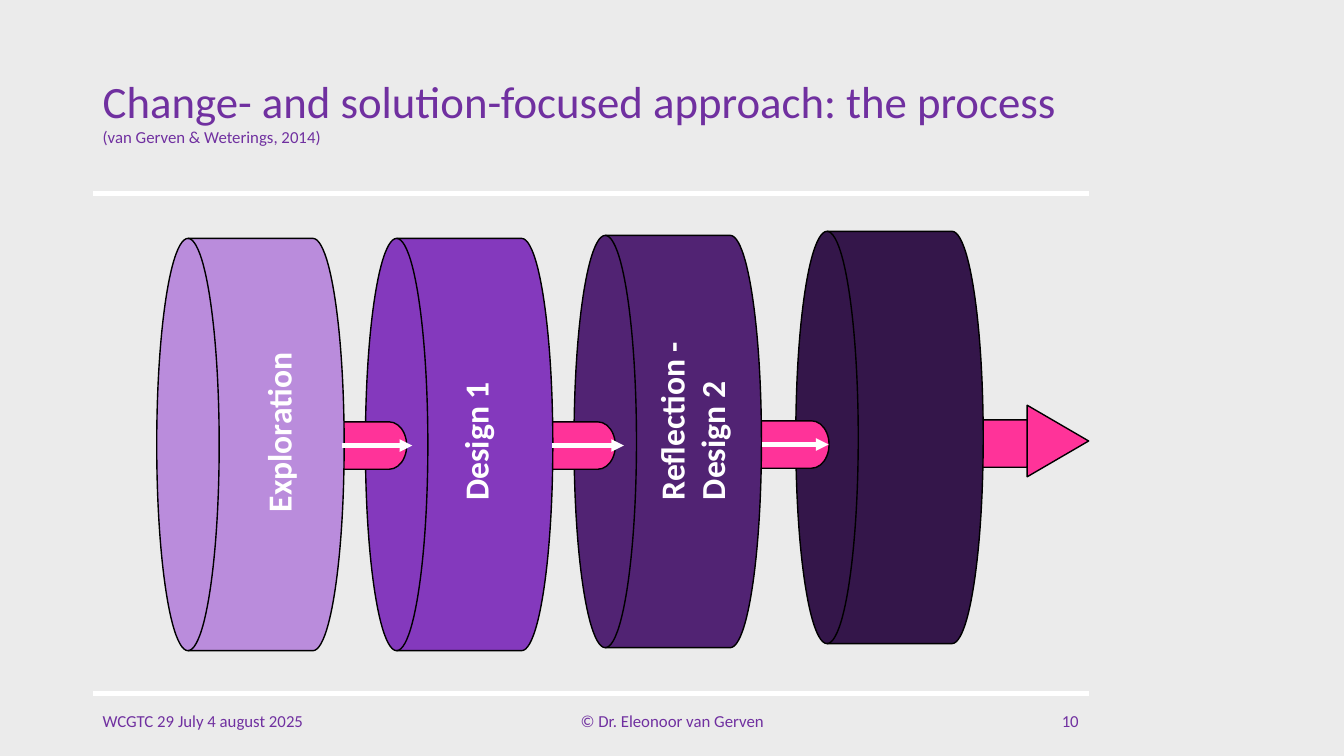
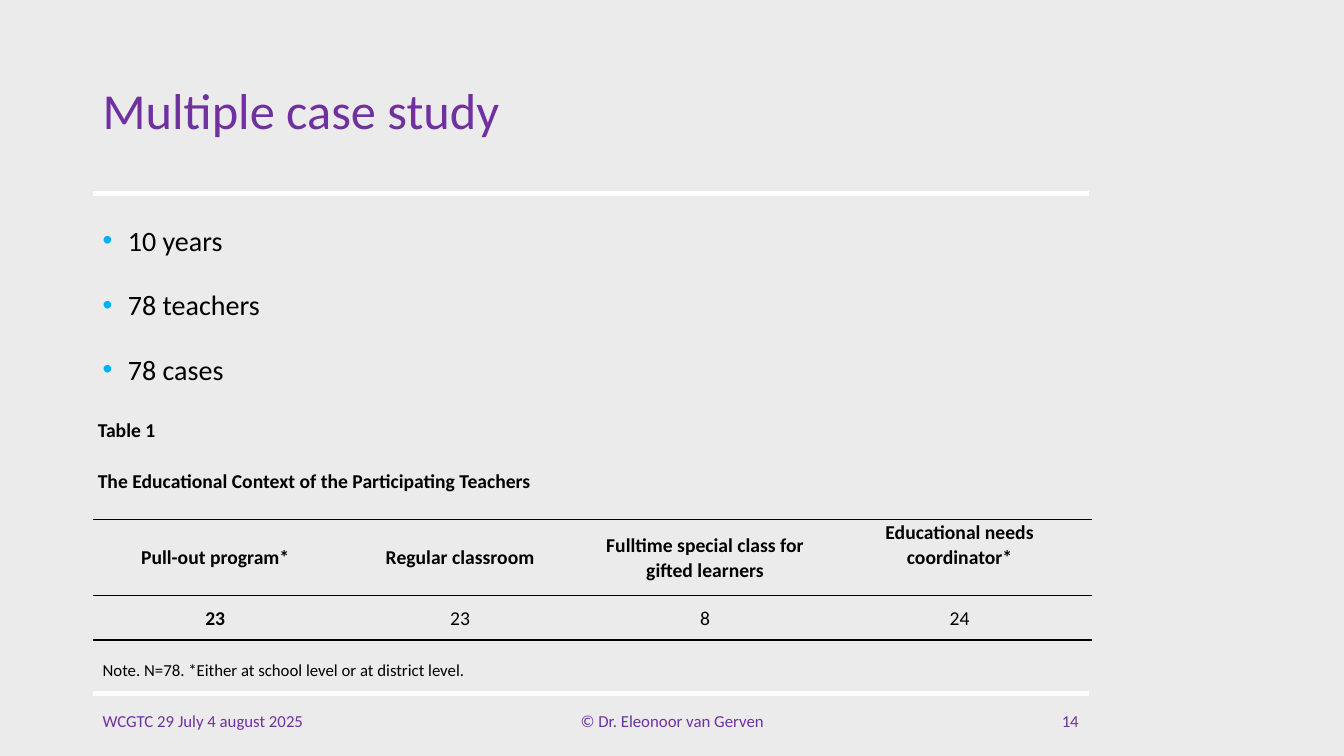
from dataclasses import dataclass

from lxml.etree import SubElement as Sub
from pptx import Presentation
from pptx.dml.color import RGBColor as Rgb
from pptx.enum.shapes import MSO_CONNECTOR as Link, MSO_SHAPE as Kind
from pptx.enum.text import MSO_ANCHOR as Anchor, PP_ALIGN as Align
from pptx.oxml.ns import qn
from pptx.util import Inches, Pt


@dataclass(frozen=True)
class Theme:
    face: str = "Calibri"
    back: str = "EBEBEB"
    ink: str = "000000"
    white: str = "FFFFFF"
    brand: str = "7030A0"
    pink: str = "FF3399"
    dot: str = "00B0F0"
    drums: tuple = ("BA8CDC", "8439BD", "512373", "34164A")
    head: int = 36
    slim: int = 32
    label: int = 24
    body: int = 20
    grid: int = 14
    small: int = 12
    thin: int = 1
    thick: int = 3


COLS, ROWS = 133.33, 75  # grid cells on a slide
LEFT, RIGHT = 9.2, 108
WIDE = RIGHT - LEFT
MID = 44.2  # row of the process axis


def cells(count):
    return Inches(count / 10)


def apply(item, values):
    for name, value in values.items():
        setattr(item, name, value)


class Deck:
    def __init__(self, theme):
        self.theme = theme
        self.prs = Presentation()
        apply(self.prs, dict(slide_width=cells(COLS), slide_height=cells(ROWS)))
        fill = self.prs.slide_master.background.fill
        fill.solid()
        fill.fore_color.rgb = Rgb.from_string(theme.back)

    def style(self, font, size, hue, bold=False):
        apply(font, dict(name=self.theme.face, size=Pt(size), bold=bold))
        font.color.rgb = Rgb.from_string(hue)

    def put(self, frame, lines, size, hue, bold=False, dot=None, gap=0, **form):
        """Fill a text frame, with one paragraph for each line."""
        for i, line in enumerate(lines):
            para = frame.add_paragraph() if i else frame.paragraphs[0]
            apply(para, form)
            if i and gap:
                para.space_before = Pt(gap)
            if dot:
                self.bullet(para, dot)
            run = para.add_run()
            run.text = line
            self.style(run.font, size, hue, bold)

    def bullet(self, para, hue):
        props = para._p.get_or_add_pPr()
        props.set("marL", str(Inches(0.25)))
        props.set("indent", str(-Inches(0.25)))
        Sub(Sub(props, qn("a:buClr")), qn("a:srgbClr"), val=hue)
        Sub(props, qn("a:buFont"), typeface="Arial")
        Sub(props, qn("a:buChar"), char="•")

    def text(self, box, lines, size, hue, anchor=Anchor.MIDDLE, turn=0, **form):
        shape = self.slide.shapes.add_textbox(*map(cells, box))
        shape.rotation = turn
        frame = shape.text_frame
        apply(frame, dict(word_wrap=True, vertical_anchor=anchor))
        self.put(frame, lines, size, hue, **form)
        return frame

    def line(self, start, end, arrow=False):
        link = self.slide.shapes.add_connector(
            Link.STRAIGHT, *map(cells, start + end))
        link.line.color.rgb = Rgb.from_string(self.theme.white)
        link.line.width = Pt(self.theme.thick)
        if arrow:
            Sub(link.line._get_or_add_ln(), qn("a:tailEnd"), type="triangle")
        Sub(link._element.spPr, qn("a:effectLst"))

    def shape(self, kind, mid, size, turn, hue):
        """Place a turned shape by its centre; size is before the turn."""
        (x, y), (w, h) = mid, size
        item = self.slide.shapes.add_shape(
            kind, *map(cells, (x - w / 2, y - h / 2, w, h)))
        item.rotation = turn
        item.shadow.inherit = False
        item.fill.solid()
        item.fill.fore_color.rgb = Rgb.from_string(hue)
        item.line.color.rgb = Rgb.from_string(self.theme.ink)
        item.line.width = Pt(self.theme.thin)

    def label(self, words, mid, size):
        (x, y), (w, h) = mid, size
        self.text((x - w / 2, y - h / 2, w, h), [words], self.theme.label,
                  self.theme.white, Anchor.TOP, 270, bold=True)

    def page(self, title, number, size, cite=None):
        """Start a slide with its title, rules and footer."""
        look = self.theme
        self.slide = self.prs.slides.add_slide(self.prs.slide_layouts[6])
        for row in (19.2, 68.8):
            self.line((LEFT, row), (RIGHT, row))
        frame = self.text((LEFT, 4, WIDE, 14.5), [title], size, look.brand,
                          line_spacing=0.9)
        if cite:
            para = frame.paragraphs[0]
            para.add_line_break()
            run = para.add_run()
            run.text = cite
            self.style(run.font, look.small, look.brand)
        for col, width, words, side in (
                (LEFT, 30, "WCGTC 29 July 4 august 2025", Align.LEFT),
                (44.2, 45, "© Dr. Eleonoor van Gerven", Align.CENTER),
                (94.2, 13.8, str(number), Align.RIGHT)):
            self.text((col, 69.5, width, 4), [words], look.small, look.brand,
                      alignment=side)

    def table(self, left, top, widths, heights):
        """Add a plain table with a rule under every row."""
        frame = self.slide.shapes.add_table(
            len(heights), len(widths),
            *map(cells, (left, top, sum(widths), sum(heights))))
        table = frame.table
        apply(table, dict(first_row=False, horz_banding=False))
        table._tbl.tblPr[0].text = "{2D5ABB26-0587-4C30-8999-92F81FD0307C}"
        for col, width in zip(table.columns, widths):
            col.width = cells(width)
        for row, height in zip(table.rows, heights):
            row.height = cells(height)
        for cell in table.iter_cells():
            apply(cell, dict(margin_left=cells(0.5), margin_right=cells(0.5),
                             margin_top=0, margin_bottom=0,
                             vertical_anchor=Anchor.MIDDLE))
            cell.fill.background()
            props = cell._tc.get_or_add_tcPr()
            edge = Sub(props, qn("a:lnB"), w=str(Pt(self.theme.thin)))
            Sub(Sub(edge, qn("a:solidFill")), qn("a:srgbClr"), val=self.theme.ink)
            props.insert(0, edge)
        return table


def process(deck):
    look = deck.theme
    deck.page("Change- and solution-focused approach: the process", 10,
              look.slim, "(van Gerven & Weterings, 2014)")
    drums = ((24.85, 44.1), (45.55, 44.1), (66.25, 43.8), (88.25, 43.4))
    pins = ((35.15, MID), (55.85, MID), (77.05, 44.1), (98.35, 44))
    disk = Kind.FLOWCHART_MAGNETIC_DISK
    for drum, pin, hue in reversed(list(zip(drums, pins, look.drums))):
        deck.shape(disk, pin, (4.7, 10.4), 270, look.pink)
        deck.shape(disk, drum, (40.9, 18.6), 270, hue)
    for start, end, row in ((33.9, 40.9, MID), (54.8, 61.9, MID),
                            (75.6, 82.2, 44.1)):
        deck.line((start, row), (end, row), arrow=True)
    deck.label("Exploration", (27.6, 41.8), (20, 5))
    deck.label("Design 1", (47.15, 42.1), (17.1, 5))
    deck.label("Reflection - Design 2", (68.65, 38.55), (24.1, 9.1))
    deck.shape(Kind.ISOSCELES_TRIANGLE, (104.95, 43.75), (7.1, 6.1), 90, look.pink)


def study(deck):
    look = deck.theme
    deck.page("Multiple case study", 14, look.head)
    deck.text((LEFT, 20, WIDE, 20), ["10 years", "78 teachers", "78 cases"],
              look.body, look.ink, Anchor.TOP, dot=look.dot, gap=10,
              line_spacing=1.5)
    table = deck.table(LEFT, 41.4, (24.3, 24.3, 24.3, 26.2), (10.1, 7.6, 4.4))
    form = dict(size=look.grid, hue=look.ink, line_spacing=1.07)
    top = table.cell(0, 0)
    top.merge(table.cell(0, 3))
    top.vertical_anchor = Anchor.TOP
    deck.put(top.text_frame,
             ["Table 1", "The Educational Context of the Participating Teachers"],
             bold=True, gap=18, **form)
    data = (("Pull-out program*", "23"), ("Regular classroom", "23"),
            ("Fulltime special class for gifted learners", "8"),
            ("Educational needs coordinator*", "24"))
    for col, pair in enumerate(data):
        for row, words in enumerate(pair, 1):
            deck.put(table.cell(row, col).text_frame, [words],
                     bold=row == 1 or col == 0, alignment=Align.CENTER, **form)
    table.cell(1, 3).vertical_anchor = Anchor.TOP
    deck.text((LEFT, 65, 50, 3),
              ["Note. N=78. *Either at school level or at district level."],
              look.small, look.ink)


def main():
    deck = Deck(Theme())
    process(deck)
    study(deck)
    deck.prs.save("out.pptx")


if __name__ == "__main__":
    main()
